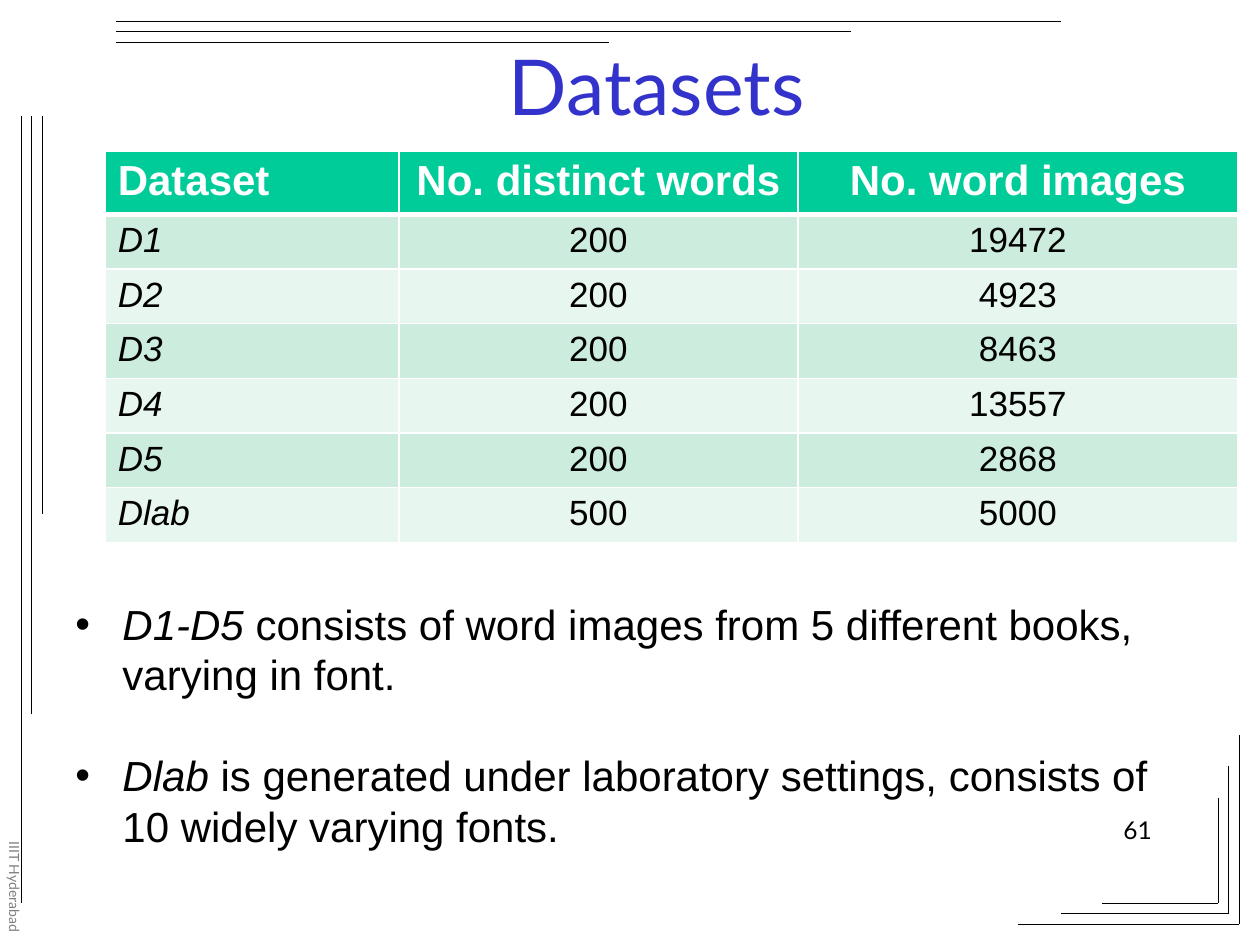
"""Build the slide on word image datasets: a table, two bullets and frame lines."""
import pptx
import pptx.dml.color
import pptx.enum.shapes
import pptx.enum.text
import pptx.oxml
import pptx.oxml.ns
import pptx.util

Cm, Pt = pptx.util.Cm, pptx.util.Pt
ALIGN = pptx.enum.text.PP_ALIGN
ANCHOR = pptx.enum.text.MSO_ANCHOR
NS = pptx.oxml.ns.nsdecls("a")

TITLE = {"name": "Lato", "size": Pt(44)}
PAGE = {"name": "Lato", "size": Pt(14)}
SIDE = {"name": "Lato", "size": Pt(8)}
HEAD = {"name": "Arial", "size": Pt(24), "bold": True}
BODY = {"name": "Arial", "size": Pt(20), "bold": False}
POINT = {"name": "Arial", "size": Pt(24)}

ROWS = [
    ("Dataset", "No. distinct words", "No. word images"),
    ("D1", "200", "19472"),
    ("D2", "200", "4923"),
    ("D3", "200", "8463"),
    ("D4", "200", "13557"),
    ("D5", "200", "2868"),
    ("Dlab", "500", "5000"),
]
POINTS = [
    ("D1-D5 ", "consists of word images from 5 different books, varying in font."),
    ("Dlab ", "is generated under laboratory settings, consists of 10 widely varying fonts."),
]


def shade(hue):
    return pptx.dml.color.RGBColor.from_string(hue)


def apply(item, form):
    for key, val in form.items():
        setattr(item, key, val)


def add_run(para, text, form, hue="000000", **more):
    run = para.add_run()
    run.text = text
    apply(run.font, {**form, **more})
    run.font.color.rgb = shade(hue)


def add_box(slide, x, y, w, h, **form):
    box = slide.shapes.add_textbox(Cm(x), Cm(y), Cm(w), Cm(h))
    apply(box.text_frame, {"word_wrap": True, **form})
    return box.text_frame


def add_label(slide, place, text, form, hue, align, **frame):
    area = add_box(slide, *place, **frame)
    para = area.paragraphs[0]
    para.alignment = align
    add_run(para, text, form, hue)
    return area


def add_line(slide, x1, y1, x2, y2):
    kind = pptx.enum.shapes.MSO_CONNECTOR.STRAIGHT
    line = slide.shapes.add_connector(kind, Cm(x1), Cm(y1), Cm(x2), Cm(y2))
    line.line.color.rgb = shade("000000")
    line.line.width = Pt(0.75)
    line._element.spPr.append(pptx.oxml.parse_xml(f"<a:effectLst {NS}/>"))


def add_frame(slide):
    gap, edge = 0.21, 2.34
    ends = [(21.39, 18.2), (17.15, 14.4), (12.27, 10.36)]
    for i, (right, low) in enumerate(ends):
        pos = 0.43 + i * gap
        add_line(slide, edge, pos, right, pos)
        add_line(slide, pos, edge, pos, low)
    starts = [(20.52, 14.82), (21.39, 15.44), (22.22, 16.08)]
    for i, (left, top) in enumerate(starts):
        x, y = 24.98 - i * gap, 18.63 - i * gap
        add_line(slide, left, y, x, y)
        add_line(slide, x, top, x, y)


def add_rim(cell, head):
    prop = cell._tc.get_or_add_tcPr()
    for i, side in enumerate("LRTB"):
        width = Pt(3 if head and side == "B" else 1)
        prop.insert(i, pptx.oxml.parse_xml(
            f'<a:ln{side} {NS} w="{width}"><a:solidFill>'
            f'<a:srgbClr val="FFFFFF"/></a:solidFill></a:ln{side}>'))


def add_grid(slide):
    wide, high = (5.92, 8.05, 8.86), 1.04
    grid = slide.shapes.add_table(len(ROWS), len(wide), Cm(2.12), Cm(3.05),
                                  Cm(sum(wide)), Cm(high * len(ROWS))).table
    for col, width in zip(grid.columns, wide):
        col.width = Cm(width)
    for r, row in enumerate(ROWS):
        head = r == 0
        fill = "00CC99" if head else ("E7F6EF", "CCECDE")[r % 2]
        for c, text in enumerate(row):
            cell = grid.cell(r, c)
            cell.fill.solid()
            cell.fill.fore_color.rgb = shade(fill)
            add_rim(cell, head)
            para = cell.text_frame.paragraphs[0]
            para.alignment = ALIGN.CENTER if c else ALIGN.LEFT
            add_run(para, text, HEAD if head else BODY,
                    "FFFFFF" if head else "000000",
                    italic=not head and c == 0)


def add_points(slide):
    area = add_box(slide, 1.27, 11.94, 22.76, 5.38)
    for i, (name, text) in enumerate(POINTS):
        para = area.add_paragraph() if i else area.paragraphs[0]
        prop = para._p.get_or_add_pPr()
        prop.set("marL", str(Cm(0.95)))
        prop.set("indent", str(-Cm(0.95)))
        prop.append(pptx.oxml.parse_xml(f'<a:buFont {NS} typeface="Arial"/>'))
        prop.append(pptx.oxml.parse_xml(f'<a:buChar {NS} char="•"/>'))
        apply(para, {"line_spacing": Pt(28.8), "space_before": Pt(28.8 * i)})
        add_run(para, name, POINT, italic=True)
        add_run(para, text, POINT, italic=False)


def main():
    deck = pptx.Presentation()
    apply(deck, {"slide_width": Cm(25.4), "slide_height": Cm(19.05)})
    slide = deck.slides.add_slide(deck.slide_layouts[6])
    add_frame(slide)
    side = add_label(slide, (-0.25, 16.71, 0.84, 2.34), "IIIT Hyderabad",
                     SIDE, "808080", ALIGN.LEFT)
    side._txBody.bodyPr.set("vert", "eaVert")
    add_label(slide, (2.46, 0.43, 21.56, 2.54), "Datasets", TITLE, "3333CC",
              ALIGN.CENTER, vertical_anchor=ANCHOR.MIDDLE)
    add_grid(slide)
    add_label(slide, (18.21, 16.31, 5.26, 1.24), "61", PAGE, "000000",
              ALIGN.RIGHT)
    add_points(slide)
    deck.save("out.pptx")


if __name__ == "__main__":
    main()
